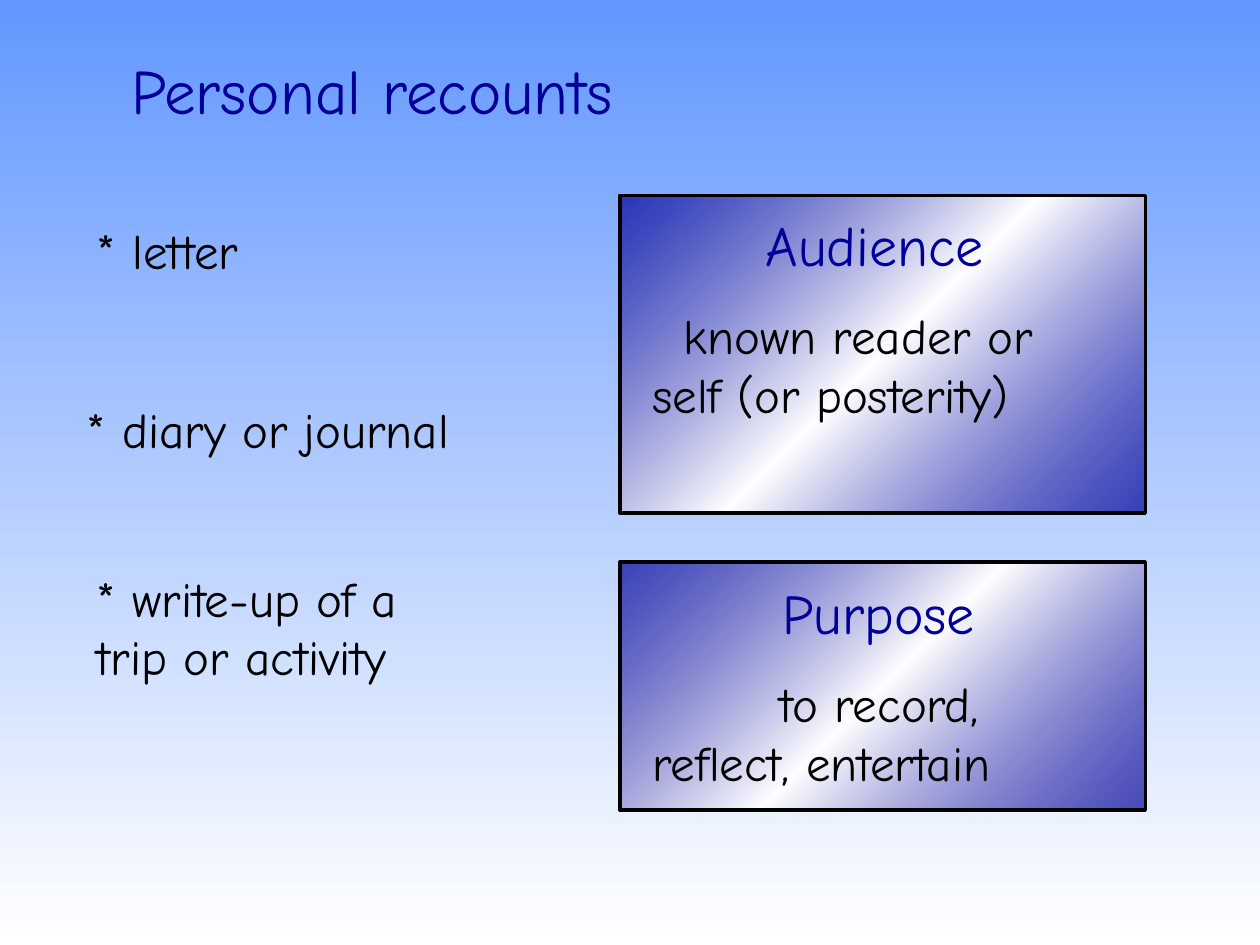
"""Build the slide on personal recounts: text types, audience and purpose."""
from copy import deepcopy
from dataclasses import dataclass

from pptx import Presentation
from pptx import util as u
from pptx.dml.color import RGBColor
from pptx.dml.fill import FillFormat
from pptx.enum import shapes, text
from pptx.oxml import ns
from pptx.oxml.xmlchemy import BaseOxmlElement
from pptx.shapes.autoshape import Shape
from pptx.slide import Slide
from pptx.text.text import TextFrame

EMU_PER_PX = 9144
FONT = "Comic Neue"
NAVY = RGBColor(0x00, 0x00, 0x99)
BLACK = RGBColor(0x00, 0x00, 0x00)
WHITE = RGBColor(0xFF, 0xFF, 0xFF)
SKY = RGBColor(0x63, 0x97, 0xFF)


@dataclass(frozen=True)
class Frame:
    left: int
    top: int
    width: int
    height: int


@dataclass(frozen=True)
class Line:
    words: str
    size: int = 28
    color: RGBColor = BLACK
    indent: int = 0


@dataclass(frozen=True)
class Panel:
    top: int
    height: int
    text_top: int
    lines: tuple[Line, ...]


@dataclass(frozen=True)
class Stop:
    position: int
    color: RGBColor
    opacity: int = 100


BACKDROP = (Stop(0, SKY), Stop(100, WHITE))
SHEEN = (Stop(0, NAVY, 69), Stop(50, WHITE), Stop(100, NAVY, 69))
TITLE = Line("Personal recounts", 36, NAVY)
EXAMPLES = (
    (Frame(67, 170, 488, 57), Line("* letter")),
    (Frame(59, 312, 354, 57), Line("* diary or journal")),
    (Frame(67, 446, 315, 103), Line("* write-up of a trip or activity")),
)
PANELS = (
    Panel(155, 252, 162, (
        Line("Audience", 32, NAVY, 90),
        Line("known reader or self (or posterity)", indent=25),
    )),
    Panel(446, 197, 454, (
        Line("Purpose", 32, NAVY, 103),
        Line("to record, reflect, entertain", indent=101),
    )),
)


def px(length: int) -> u.Emu:
    """Turn a length in px into EMU."""
    return u.Emu(length * EMU_PER_PX)


def edges(frame: Frame) -> tuple[u.Emu, ...]:
    """Give the left, top, width and height of a frame in EMU."""
    return px(frame.left), px(frame.top), px(frame.width), px(frame.height)


def paint_gradient(
    fill: FillFormat, owner: BaseOxmlElement, stops: tuple[Stop, ...], angle: int
) -> None:
    """Fill with a linear gradient running clockwise at the given angle."""
    fill.gradient()
    fill.gradient_angle = 360 - angle
    stop_list = next(owner.iter(ns.qn("a:gsLst")))
    while len(stop_list) < len(stops):
        stop_list.append(deepcopy(stop_list[0]))
    for stop, target in zip(stops, fill.gradient_stops):
        target.position = stop.position / 100
        target.color.rgb = stop.color
    for stop, element in zip(stops, stop_list):
        if stop.opacity < 100:
            alpha = element[0].makeelement(ns.qn("a:alpha"), {})
            alpha.set("val", str(stop.opacity * 1000))
            element[0].append(alpha)


def write_lines(
    body: TextFrame,
    lines: tuple[Line, ...],
    alignment: text.PP_ALIGN = text.PP_ALIGN.LEFT,
) -> None:
    """Write one styled paragraph for each line."""
    body.word_wrap = True
    body.auto_size = text.MSO_AUTO_SIZE.SHAPE_TO_FIT_TEXT
    body.vertical_anchor = text.MSO_ANCHOR.TOP
    for index, line in enumerate(lines):
        para = body.add_paragraph() if index else body.paragraphs[0]
        para.alignment = alignment
        para.space_before = u.Pt(16 if index else 0)
        properties = para._p.get_or_add_pPr()
        properties.set("marL", "0")
        properties.set("indent", str(px(line.indent)))
        span = para.add_run()
        span.text = line.words
        span.font.name = FONT
        span.font.size = u.Pt(line.size)
        span.font.color.rgb = line.color


def add_text(page: Slide, frame: Frame, lines: tuple[Line, ...]) -> Shape:
    """Add a wrapping text box."""
    box = page.shapes.add_textbox(*edges(frame))
    write_lines(box.text_frame, lines)
    return box


def add_panel(page: Slide, panel: Panel) -> None:
    """Add a gradient rectangle with its text on top."""
    frame = Frame(492, panel.top, 417, panel.height)
    box = page.shapes.add_shape(shapes.MSO_SHAPE.RECTANGLE, *edges(frame))
    box.shadow.inherit = False
    paint_gradient(box.fill, box._element.spPr, SHEEN, 45)
    box.line.color.rgb = BLACK
    box.line.width = u.Pt(2)
    add_text(page, Frame(508, panel.text_top, 370, 180), panel.lines)


def main() -> None:
    """Build and save the deck."""
    deck = Presentation()
    deck.slide_width, deck.slide_height = px(1000), px(750)
    page = deck.slides.add_slide(deck.slide_layouts[5])
    paint_gradient(page.background.fill, page._element, BACKDROP, 90)
    title = page.shapes.title
    title.left, title.top, title.width, title.height = edges(Frame(0, 36, 591, 70))
    write_lines(title.text_frame, (TITLE,), text.PP_ALIGN.CENTER)
    for frame, line in EXAMPLES:
        add_text(page, frame, (line,))
    for panel in PANELS:
        add_panel(page, panel)
    deck.save("out.pptx")


if __name__ == "__main__":
    main()
